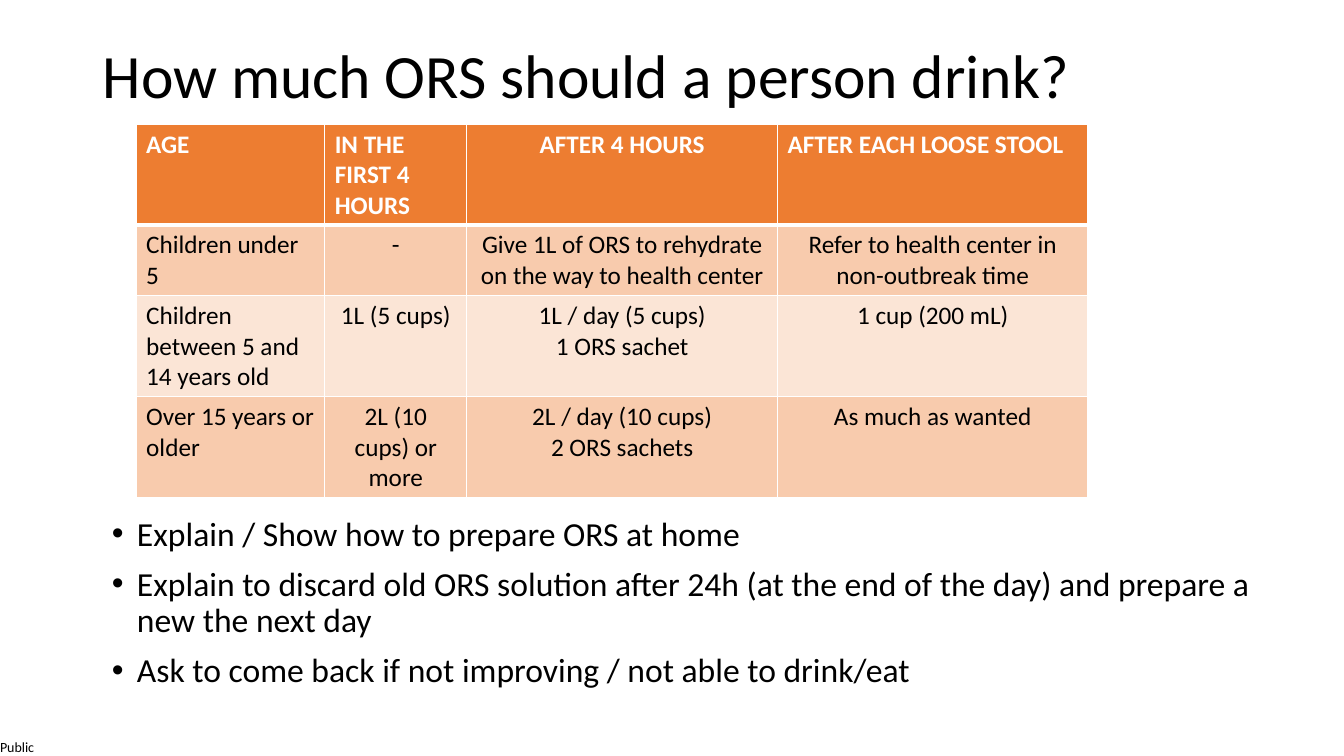
from dataclasses import dataclass

from lxml import etree
from pptx import Presentation
from pptx.dml.color import RGBColor
from pptx.enum.text import MSO_ANCHOR, PP_ALIGN
from pptx.oxml.ns import qn
from pptx.slide import Slide
from pptx.table import _Cell
from pptx.text.text import TextFrame, _Paragraph
from pptx.util import Inches, Pt

LEFT, CENTER = PP_ALIGN.LEFT, PP_ALIGN.CENTER
TOP = MSO_ANCHOR.TOP
FONT = "Calibri"
COLORS = {
    "text": "000000",
    "white": "FFFFFF",
    "header": "ED7D31",
    "dark band": "F8CBAD",
    "light band": "FBE5D6",
}
SLIDE_WIDTH, SLIDE_HEIGHT = Inches(13.33), Inches(7.5)
BULLET_INDENT = Inches(0.25)


@dataclass(frozen=True)
class Area:
    left: float
    top: float
    width: float
    height: float


@dataclass(frozen=True)
class Column:
    width: float
    header_alignment: PP_ALIGN
    body_alignment: PP_ALIGN


@dataclass(frozen=True)
class DoseRow:
    height: float
    fill: str
    texts: tuple[str, str, str, str]


TITLE_AREA = Area(6.9, 5.33, 86.27, 19.33)
ADVICE_AREA = Area(7.58, 67.73, 86.27, 29.87)
LABEL_AREA = Area(0, 97.73, 2.78, 2.27)
TABLE_LEFT, TABLE_TOP = 10.13, 16.4

COLUMNS = (
    Column(14.03, LEFT, LEFT),
    Column(10.58, LEFT, CENTER),
    Column(23.11, CENTER, CENTER),
    Column(23.11, LEFT, CENTER),
)
DOSE_ROWS = (
    DoseRow(12.4, "header", (
        "AGE", "IN THE FIRST 4 HOURS", "AFTER 4 HOURS", "AFTER EACH LOOSE STOOL")),
    DoseRow(8.67, "dark band", (
        "Children under 5", "-",
        "Give 1L of ORS to rehydrate on the way to health center",
        "Refer to health center in non-outbreak time")),
    DoseRow(11.6, "light band", (
        "Children between 5 and 14 years old", "1L (5 cups)",
        "1L / day (5 cups)\n1 ORS sachet", "1 cup (200 mL)")),
    DoseRow(12.4, "dark band", (
        "Over 15 years or older", "2L (10 cups) or more",
        "2L / day (10 cups)\n2 ORS sachets", "As much as wanted")),
)
ADVICE = (
    "Explain / Show how to prepare ORS at home",
    "Explain to discard old ORS solution after 24h (at the end of the day) "
    "and prepare a new the next day",
    "Ask to come back if not improving / not able to drink/eat",
)


def across(percent: float) -> int:
    return round(SLIDE_WIDTH * percent / 100)


def down(percent: float) -> int:
    return round(SLIDE_HEIGHT * percent / 100)


def add_run(paragraph: _Paragraph, text: str, size: float,
            color: str = "text", bold: bool = False) -> None:
    run = paragraph.add_run()
    run.text = text
    run.font.name = FONT
    run.font.size = Pt(size)
    run.font.bold = bold
    run.font.color.rgb = RGBColor.from_string(COLORS[color])


def next_paragraph(frame: TextFrame, index: int) -> _Paragraph:
    return frame.paragraphs[0] if index == 0 else frame.add_paragraph()


def add_text_frame(slide: Slide, area: Area) -> TextFrame:
    shape = slide.shapes.add_textbox(
        across(area.left), down(area.top), across(area.width), down(area.height))
    frame = shape.text_frame
    frame.word_wrap = True
    frame.vertical_anchor = TOP
    return frame


def add_title(slide: Slide) -> None:
    paragraph = add_text_frame(slide, TITLE_AREA).paragraphs[0]
    paragraph.line_spacing = 0.9
    add_run(paragraph, "How much ORS should a person drink?", 44)


def add_advice(slide: Slide) -> None:
    frame = add_text_frame(slide, ADVICE_AREA)
    for index, text in enumerate(ADVICE):
        paragraph = next_paragraph(frame, index)
        paragraph.line_spacing = 0.9
        paragraph.space_before = Pt(10 if index else 0)
        properties = paragraph._p.get_or_add_pPr()
        properties.set("marL", str(BULLET_INDENT))
        properties.set("indent", str(-BULLET_INDENT))
        etree.SubElement(properties, qn("a:buFont"), typeface="Arial")
        etree.SubElement(properties, qn("a:buChar"), char="•")
        add_run(paragraph, text, 24)


def add_label(slide: Slide) -> None:
    frame = add_text_frame(slide, LABEL_AREA)
    frame.word_wrap = False
    frame.margin_left = frame.margin_right = 0
    frame.margin_top = frame.margin_bottom = 0
    add_run(frame.paragraphs[0], "Public", 10)


def set_borders(cell: _Cell, top: float, bottom: float) -> None:
    properties = cell._tc.get_or_add_tcPr()
    widths = {"a:lnL": 1, "a:lnR": 1, "a:lnT": top, "a:lnB": bottom}
    for position, (tag, width) in enumerate(widths.items()):
        line = etree.Element(qn(tag), w=str(Pt(width)))
        fill = etree.SubElement(line, qn("a:solidFill"))
        etree.SubElement(fill, qn("a:srgbClr"), val=COLORS["white"])
        properties.insert(position, line)


def add_dose_table(slide: Slide) -> None:
    table = slide.shapes.add_table(
        len(DOSE_ROWS), len(COLUMNS), across(TABLE_LEFT), down(TABLE_TOP),
        across(sum(column.width for column in COLUMNS)),
        down(sum(row.height for row in DOSE_ROWS))).table
    table.horz_banding = False
    for index, column in enumerate(COLUMNS):
        table.columns[index].width = across(column.width)
    for row_index, row in enumerate(DOSE_ROWS):
        table.rows[row_index].height = down(row.height)
        header = row_index == 0
        for column_index, (column, text) in enumerate(zip(COLUMNS, row.texts)):
            cell = table.cell(row_index, column_index)
            cell.fill.solid()
            cell.fill.fore_color.rgb = RGBColor.from_string(COLORS[row.fill])
            set_borders(cell, top=3 if row_index == 1 else 1, bottom=3 if header else 1)
            for index, line in enumerate(text.split("\n")):
                paragraph = next_paragraph(cell.text_frame, index)
                paragraph.alignment = (
                    column.header_alignment if header else column.body_alignment)
                add_run(paragraph, line, 18, "white" if header else "text", header)


def main() -> None:
    presentation = Presentation()
    presentation.slide_width = SLIDE_WIDTH
    presentation.slide_height = SLIDE_HEIGHT
    slide = presentation.slides.add_slide(presentation.slide_layouts[6])
    add_label(slide)
    add_title(slide)
    add_advice(slide)
    add_dose_table(slide)
    presentation.save("out.pptx")


if __name__ == "__main__":
    main()
